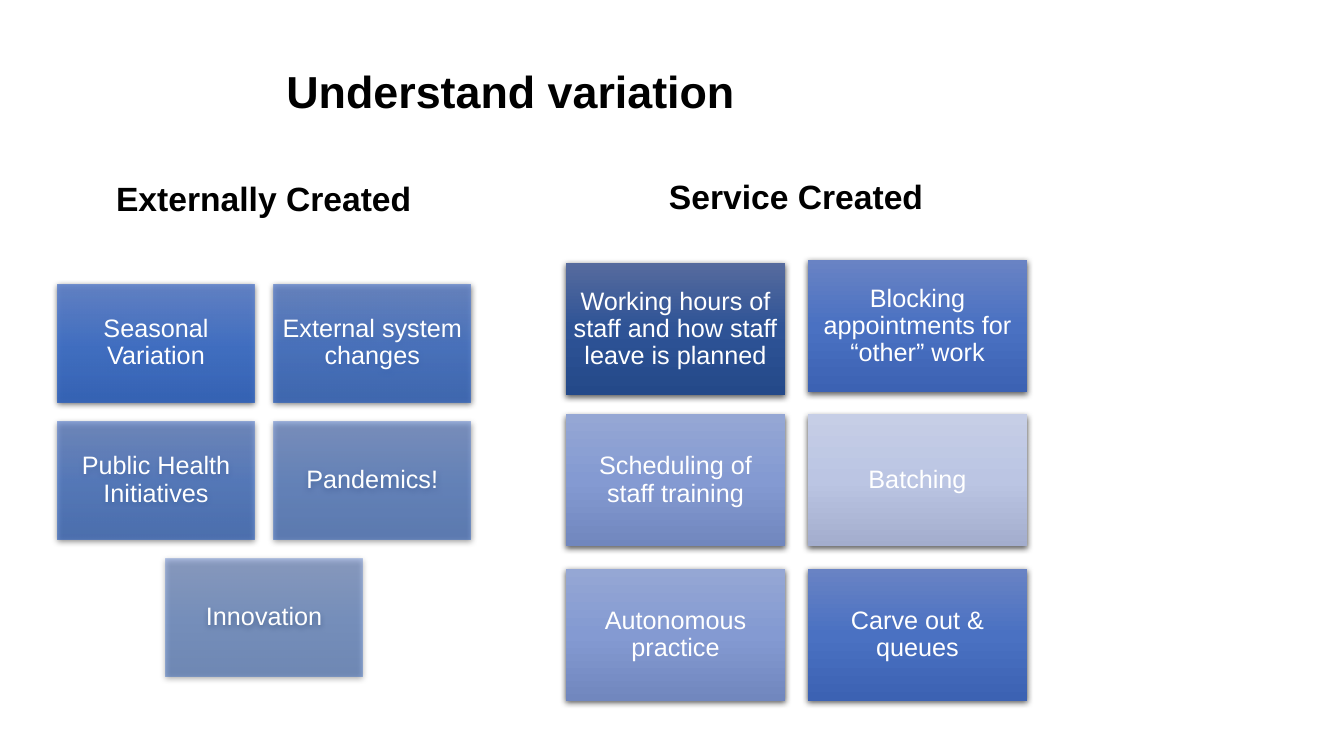
from dataclasses import dataclass

from lxml.etree import SubElement
from pptx import Presentation
from pptx.dml.color import RGBColor
from pptx.enum.shapes import MSO_SHAPE
from pptx.enum.text import MSO_ANCHOR, PP_ALIGN
from pptx.oxml.ns import qn
from pptx.util import Emu, Pt

EMU_PER_PX = 9144
COLUMNS = 2
TITLE_ONLY = 5

NAVY = ("566B9E", "2E5396", "244989")
ROYAL = ("6983C4", "4A71C2", "3C62B3")
PERIWINKLE = ("95A7D4", "849AD2", "7187BE")
PALE = ("C6CEE6", "BBC5E3", "A3ADCD")
BLUE = ("6183CB", "3E70CA", "3062BB")


@dataclass
class Card:
    """One cause of variation with its gradient, opacity and vertical nudge."""
    label: str
    shades: tuple
    opacity: int = 100
    nudge: int = 0


EXTERNAL_LABELS = ["Seasonal Variation", "External system changes",
                   "Public Health Initiatives", "Pandemics!", "Innovation"]
EXTERNAL_CARDS = [Card(label, BLUE, 90 - 10 * index)
                  for index, label in enumerate(EXTERNAL_LABELS)]
SERVICE_CARDS = [
    Card("Working hours of staff and how staff leave is planned", NAVY, nudge=3),
    Card("Blocking appointments for “other” work", ROYAL),
    Card("Scheduling of staff training", PERIWINKLE),
    Card("Batching", PALE),
    Card("Autonomous practice", PERIWINKLE),
    Card("Carve out & queues", ROYAL),
]


def px(length):
    """Turn pixels into EMU."""
    return Emu(round(length * EMU_PER_PX))


def color(hex_code):
    """Turn a hex string into a colour."""
    return RGBColor.from_string(hex_code)


def write(frame, text, size, hex_code, bold=False, align=PP_ALIGN.CENTER, spacing=None):
    """Write one formatted paragraph into a text frame."""
    frame.word_wrap = True
    para = frame.paragraphs[0]
    para.alignment = align
    para.line_spacing = spacing
    span = para.add_run()
    span.text = text
    span.font.name = "Arial"
    span.font.size = Pt(size)
    span.font.bold = bold
    span.font.color.rgb = color(hex_code)


def shade(shape, shades, opacity):
    """Fill a shape with an even vertical gradient."""
    shape.fill.gradient()
    shape.fill.gradient_angle = 270
    stops = shape.element.spPr.find(qn("a:gradFill")).find(qn("a:gsLst"))
    for stop in list(stops):
        stops.remove(stop)
    for index, hex_code in enumerate(shades):
        stop = SubElement(stops, qn("a:gs"), pos=str(index * 50000))
        tone = SubElement(stop, qn("a:srgbClr"), val=hex_code)
        if opacity < 100:
            SubElement(tone, qn("a:alpha"), val=str(opacity * 1000))


def drop_shadow(shape):
    """Give a shape a soft black shadow below it."""
    shape.shadow.inherit = False
    effects = shape.element.spPr.find(qn("a:effectLst"))
    shadow = SubElement(effects, qn("a:outerShdw"), blurRad=str(Pt(4.5)),
                        dist=str(Pt(1.5)), dir="5400000", algn="ctr", rotWithShape="0")
    black = SubElement(shadow, qn("a:srgbClr"), val="000000")
    SubElement(black, qn("a:alpha"), val="63000")


def add_title(page, text, left, top, width, height):
    """Place and format the slide title."""
    title = page.shapes.title
    title.left, title.top, title.width, title.height = map(px, (left, top, width, height))
    frame = title.text_frame
    frame.vertical_anchor = MSO_ANCHOR.MIDDLE
    frame.margin_left = px(22)
    write(frame, text, 32, "000000", bold=True, align=PP_ALIGN.LEFT, spacing=0.9)


def add_heading(page, text, left, top, width, height):
    """Place the heading of one group."""
    box = page.shapes.add_textbox(*map(px, (left, top, width, height)))
    write(box.text_frame, text, 24, "000000", bold=True)


def add_card(page, card, left, top, width, height):
    """Place one shaded card with its label."""
    shape = page.shapes.add_shape(MSO_SHAPE.RECTANGLE, *map(px, (left, top, width, height)))
    shade(shape, card.shades, card.opacity)
    shape.line.fill.background()
    drop_shadow(shape)
    frame = shape.text_frame
    frame.vertical_anchor = MSO_ANCHOR.MIDDLE
    frame.margin_left = frame.margin_right = px(7)
    frame.margin_top = frame.margin_bottom = px(7)
    write(frame, card.label, 18, "FFFFFF", spacing=0.9)


def add_card_grid(page, cards, left, top, width, height, gap):
    """Fill a box with rows of cards, centring a short last row."""
    rows = -(-len(cards) // COLUMNS)
    card_width = (width - gap * (COLUMNS - 1)) / COLUMNS
    card_height = (height - gap * (rows - 1)) / rows
    for index, card in enumerate(cards):
        row, column = divmod(index, COLUMNS)
        missing = COLUMNS - min(COLUMNS, len(cards) - row * COLUMNS)
        card_left = left + (column + missing / 2) * (card_width + gap)
        card_top = top + row * (card_height + gap) + card.nudge
        add_card(page, card, card_left, card_top, card_width, card_height)


def main():
    """Build the slide and save it."""
    deck = Presentation()
    deck.slide_width, deck.slide_height = px(1333), px(750)
    page = deck.slides.add_slide(deck.slide_layouts[TITLE_ONLY])
    add_title(page, "Understand variation", 262, 35, 623, 116)
    add_card_grid(page, SERVICE_CARDS, 561, 258, 458, 437, gap=22)
    add_card_grid(page, EXTERNAL_CARDS, 57, 282, 410, 389, gap=19)
    add_heading(page, "Externally Created", 57, 172, 409, 50)
    add_heading(page, "Service Created", 585, 170, 409, 50)
    deck.save("out.pptx")


if __name__ == "__main__":
    main()
